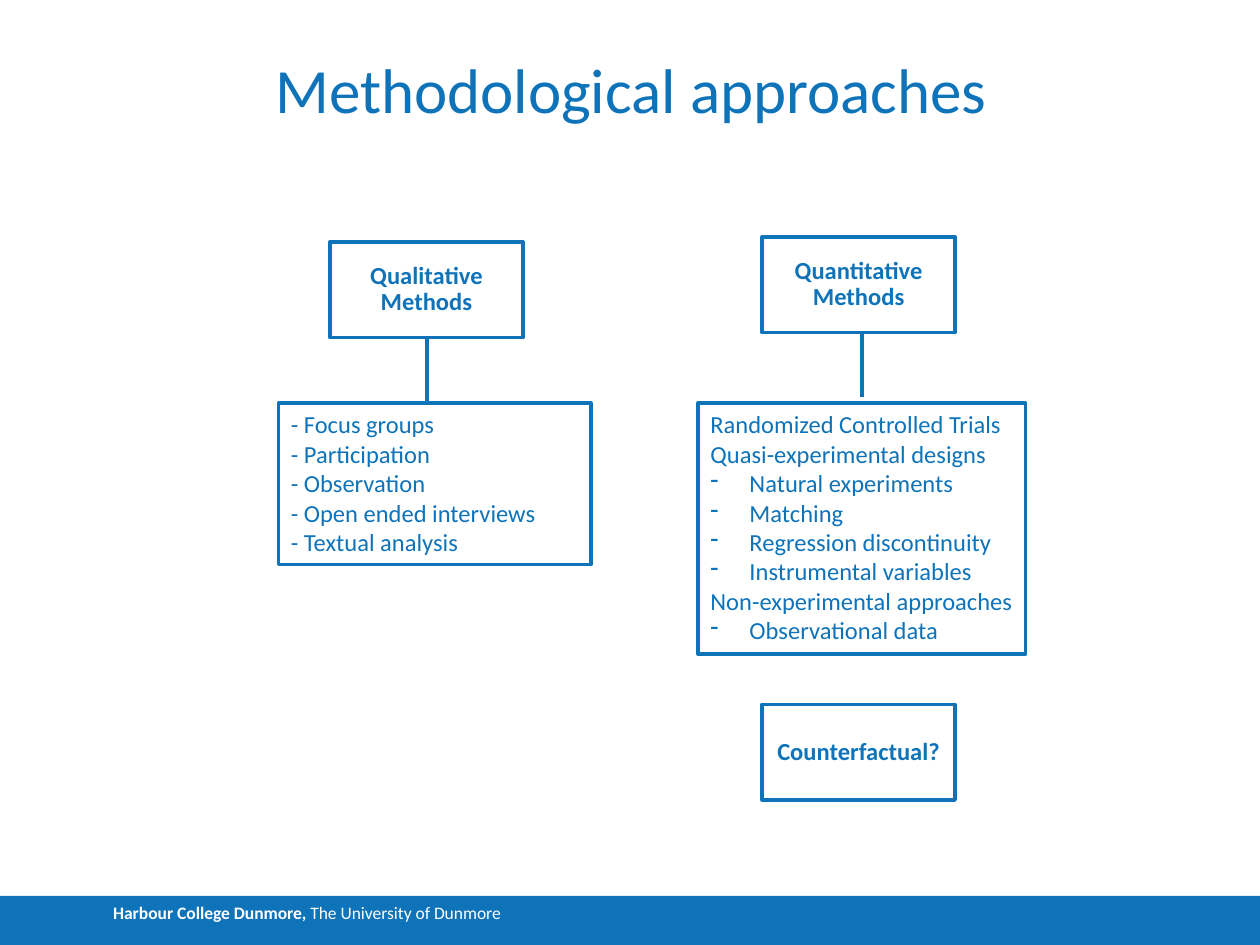
from dataclasses import dataclass

from lxml.etree import SubElement
from pptx import Presentation
from pptx.dml.color import RGBColor
from pptx.enum.shapes import MSO_CONNECTOR, MSO_SHAPE
from pptx.enum.text import MSO_ANCHOR, PP_ALIGN
from pptx.oxml.ns import qn
from pptx.slide import Slide
from pptx.util import Inches, Pt


@dataclass(frozen=True)
class Theme:
    font: str = "Calibri"
    blue: RGBColor = RGBColor(0x0E, 0x73, 0xB9)
    white: RGBColor = RGBColor(0xFF, 0xFF, 0xFF)
    head: int = 36
    body: int = 14
    foot: int = 10
    rule: int = 2
    unit: float = 0.1


def apply(item, **style):
    for key, value in style.items():
        setattr(item, key, value)


def indent(para, left, first=0):
    props = para._p.get_or_add_pPr()
    for key, value in {"marL": left, "indent": first}.items():
        props.set(key, str(Inches(value)))
    return props


@dataclass
class Board:
    """Draws onto one slide, on a grid of 100 columns by 75 rows."""

    slide: Slide
    theme: Theme

    def grid(self, *cells):
        return [Inches(cell * self.theme.unit) for cell in cells]

    def label(self, para, text, size, color=None, bold=False):
        run = para.add_run()
        run.text = text
        apply(run.font, name=self.theme.font, size=Pt(size), bold=bold)
        run.font.color.rgb = color or self.theme.blue

    def frame(self, shape, inset=None, **style):
        frame = shape.text_frame
        apply(frame, word_wrap=True, **style)
        if inset is not None:
            sides = ("left", "right", "top", "bottom")
            apply(frame, **{f"margin_{side}": Inches(inset) for side in sides})
        return frame

    def box(self, cells, fill=False):
        shape = self.slide.shapes.add_shape(MSO_SHAPE.RECTANGLE, *self.grid(*cells))
        shape.shadow.inherit = False
        if fill:
            shape.fill.solid()
            shape.fill.fore_color.rgb = self.theme.blue
            shape.line.fill.background()
        else:
            shape.fill.background()
            shape.line.color.rgb = self.theme.blue
            shape.line.width = Pt(self.theme.rule)
        return shape

    def title(self, text, cells):
        shape = self.slide.shapes.add_textbox(*self.grid(*cells))
        para = self.frame(shape, 0, vertical_anchor=MSO_ANCHOR.BOTTOM).paragraphs[0]
        para.alignment = PP_ALIGN.CENTER
        self.label(para, text, self.theme.head)

    def card(self, text, col, row):
        shape = self.box((col, row, 15.3, 7.6))
        para = self.frame(shape, 0.01, vertical_anchor=MSO_ANCHOR.MIDDLE).paragraphs[0]
        apply(para, alignment=PP_ALIGN.CENTER, line_spacing=0.9)
        self.label(para, text, self.theme.body, bold=True)

    def panel(self, items, cells):
        frame = self.frame(self.box(cells), vertical_anchor=MSO_ANCHOR.TOP)
        for num, (text, dash) in enumerate(items):
            para = frame.add_paragraph() if num else frame.paragraphs[0]
            para.alignment = PP_ALIGN.LEFT
            if dash:
                props = indent(para, 0.31, -0.31)
                SubElement(props, qn("a:buChar")).set("char", "-")
            self.label(para, text, self.theme.body)

    def link(self, col, top, end):
        line = self.slide.shapes.add_connector(
            MSO_CONNECTOR.STRAIGHT, *self.grid(col, top, col, end))
        line.line.color.rgb = self.theme.blue
        line.line.width = Pt(self.theme.rule)
        SubElement(line._element.spPr, qn("a:effectLst"))

    def footer(self, name, rest, cells):
        frame = self.frame(self.box(cells, fill=True), vertical_anchor=MSO_ANCHOR.TOP)
        para = frame.paragraphs[0]
        para.alignment = PP_ALIGN.LEFT
        indent(para, 0.8)
        for text, bold in ((name, True), (rest, False)):
            self.label(para, text, self.theme.foot, self.theme.white, bold)


def main():
    deck = Presentation()
    apply(deck, slide_width=Inches(10), slide_height=Inches(7.5))
    board = Board(deck.slides.add_slide(deck.slide_layouts[6]), Theme())

    board.footer("Harbour College Dunmore, ", "The University of Dunmore",
                 (0, 71.1, 100, 3.9))
    board.title("Methodological approaches", (9.1, 3.9, 82, 6.1))

    for text, col, row in (
        ("Qualitative Methods", 26.2, 19.2),
        ("Quantitative Methods", 60.5, 18.8),
        ("Counterfactual?", 60.5, 55.9),
    ):
        board.card(text, col, row)

    board.link(33.9, 26.9, 32)
    board.link(68.4, 26.4, 31.5)

    tools = ("Focus groups", "Participation", "Observation",
             "Open ended interviews", "Textual analysis")
    board.panel([(f"- {tool}", False) for tool in tools], (22.1, 32, 24.8, 12.8))
    board.panel([
        ("Randomized Controlled Trials", False),
        ("Quasi-experimental designs", False),
        ("Natural experiments", True),
        ("Matching", True),
        ("Regression discontinuity", True),
        ("Instrumental variables", True),
        ("Non-experimental approaches", False),
        ("Observational data", True),
    ], (55.4, 32, 26, 19.9))

    deck.save("out.pptx")


if __name__ == "__main__":
    main()
